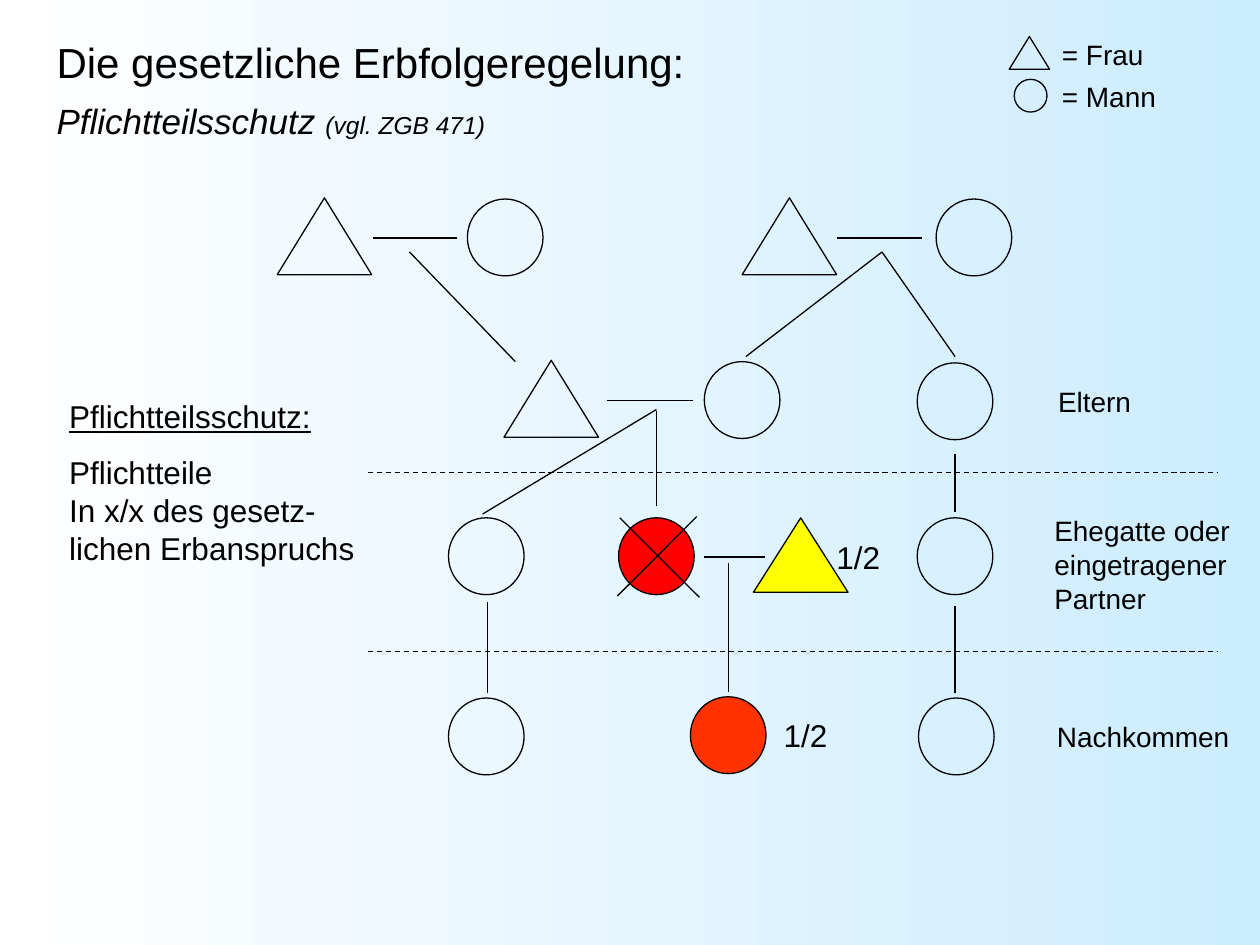
import pptx
import pptx.dml.color
import pptx.enum.dml
import pptx.enum.shapes
import pptx.enum.text
import pptx.oxml.ns
import pptx.util
from pptx.util import Inches

SHAPES = pptx.enum.shapes.MSO_SHAPE
TRIANGLE, CIRCLE = SHAPES.ISOSCELES_TRIANGLE, SHAPES.OVAL
BLACK = "000000"


def paint(color_format, hex_color):
    """Set a colour format to a hex colour."""
    color_format.rgb = pptx.dml.color.RGBColor.from_string(hex_color)


def add_symbol(page, kind, left, top, width, height, fill=None):
    """Add one outlined person symbol, filled if a colour is given."""
    shape = page.shapes.add_shape(kind, Inches(left), Inches(top), Inches(width), Inches(height))
    shape.shadow.inherit = False
    if fill:
        shape.fill.solid()
        paint(shape.fill.fore_color, fill)
    else:
        shape.fill.background()
    paint(shape.line.color, BLACK)
    shape.line.width = pptx.util.Pt(0.75)


def add_line(page, x1, y1, x2, y2, dashed=False):
    """Add one thin black straight line."""
    line = page.shapes.add_connector(
        pptx.enum.shapes.MSO_CONNECTOR.STRAIGHT, Inches(x1), Inches(y1), Inches(x2), Inches(y2))
    paint(line.line.color, BLACK)
    line.line.width = pptx.util.Pt(0.75)
    if dashed:
        line.line.dash_style = pptx.enum.dml.MSO_LINE.DASH
    properties = line._element.spPr
    properties.append(properties.makeelement(pptx.oxml.ns.qn("a:effectLst"), {}))


def add_span(para, text, size, italic=False, underline=False):
    """Add one run of black Arial text."""
    span = para.add_run()
    span.text = text
    span.font.name = "Arial"
    span.font.size = pptx.util.Pt(size)
    span.font.italic = italic
    span.font.underline = underline
    paint(span.font.color, BLACK)


def add_frame(page, left, top, width, height, wrap=True):
    """Add an empty text box and return its text frame."""
    box = page.shapes.add_textbox(Inches(left), Inches(top), Inches(width), Inches(height))
    box.text_frame.word_wrap = wrap
    return box.text_frame


def add_text(page, box, lines, size, gap=0, wrap=True, underline=False):
    """Add a text box with one paragraph for each line."""
    frame = add_frame(page, *box, wrap)
    for index, line in enumerate(lines):
        para = frame.add_paragraph() if index else frame.paragraphs[0]
        para.space_before = pptx.util.Pt(gap if index else 0)
        add_span(para, line, size, underline=underline)


def set_background(page):
    """Fill the page with a gradient from white to light blue."""
    fill = page.background.fill
    fill.gradient()
    fill.gradient_angle = 0
    for stop, position, color in zip(fill.gradient_stops, (0, 1), ("FFFFFF", "CCECFF")):
        stop.position = position
        paint(stop.color, color)


def add_heading(page, left, top, width, height):
    """Add the title with its italic second line."""
    frame = add_frame(page, left, top, width, height)
    frame.vertical_anchor = pptx.enum.text.MSO_ANCHOR.MIDDLE
    para = frame.paragraphs[0]
    para.line_spacing = 1.3
    add_span(para, "Die gesetzliche Erbfolgeregelung:", 24)
    para.add_line_break()
    add_span(para, "Pflichtteilsschutz ", 20, italic=True)
    add_span(para, "(vgl. ZGB 471)", 14, italic=True)


def add_legend(page, left, top):
    """Add the key to the two symbols."""
    add_symbol(page, TRIANGLE, left, top + 0.04, 0.32, 0.26)
    add_symbol(page, CIRCLE, left + 0.04, top + 0.38, 0.26, 0.26)
    add_text(page, (left + 0.32, top, 1.25, 0.72), ["= Frau", "= Mann"], 16, gap=5)


def add_explanation(page, left, top):
    """Add the note on compulsory shares."""
    add_text(page, (left, top, 2.12, 0.4), ["Pflichtteilsschutz:"], 18, wrap=False, underline=True)
    lines = ["Pflichtteile", "In x/x des gesetz-", "lichen Erbanspruchs"]
    add_text(page, (left, top + 0.45, 2.47, 1), lines, 18, wrap=False)


def add_family_tree(page, left, top):
    """Add persons, family lines, generation dividers and shares."""
    women = [(0, 0, None), (3.69, 0, None), (1.8, 1.29, None), (3.78, 2.54, "FFFF00")]
    men = [(1.51, 0.01, None), (5.23, 0.01, None), (3.39, 1.3, None), (5.08, 1.31, None),
           (1.36, 2.54, None), (2.71, 2.54, "FF0000"), (5.08, 2.54, None),
           (1.36, 3.97, None), (3.28, 3.96, "FF3300"), (5.09, 3.97, None)]
    for kind, width, people in ((TRIANGLE, 0.75, women), (CIRCLE, 0.6, men)):
        for x, y, fill in people:
            height = 0.59 if fill == "FFFF00" else 0.61
            add_symbol(page, kind, left + x, top + y, width, height, fill)

    marriages = [(0.76, 0.32, 0.67), (4.44, 0.32, 0.68), (2.62, 1.61, 0.68), (3.39, 2.85, 0.48)]
    for x, y, length in marriages:
        add_line(page, left + x, top + y, left + x + length, top + y)

    descents = [(1.05, 0.43, 1.89, 1.3), (4.8, 0.43, 3.72, 1.26), (4.8, 0.43, 5.38, 1.26),
                (3.01, 1.68, 1.63, 2.51), (3.01, 1.69, 3.01, 2.45), (5.38, 2.03, 5.38, 2.49),
                (1.67, 3.21, 1.67, 3.93), (3.58, 2.9, 3.58, 3.92), (5.38, 3.24, 5.38, 3.93)]
    death_cross = [(2.72, 2.54, 3.35, 3.17), (3.33, 2.53, 2.7, 3.16)]
    for x1, y1, x2, y2 in descents + death_cross:
        add_line(page, left + x1, top + y1, left + x2, top + y2)

    for y in (2.18, 3.6):
        add_line(page, left + 0.72, top + y, left + 7.47, top + y, dashed=True)
    for x, y in ((4.34, 2.65), (3.92, 4.06)):
        add_text(page, (left + x, top + y, 0.55, 0.4), ["1/2"], 18, wrap=False)


def add_generations(page, left, top):
    """Add the names of the three generations."""
    labels = [("Eltern", 0.03, 0, 1.5, 0.37),
              ("Ehegatte oder eingetragener Partner", 0, 1.03, 1.73, 0.9),
              ("Nachkommen", 0.02, 2.66, 1.71, 0.37)]
    for text, x, y, width, height in labels:
        add_text(page, (left + x, top + y, width, height), [text], 16)


def main():
    """Build the slide and save it."""
    deck = pptx.Presentation()
    deck.slide_width, deck.slide_height = Inches(10), Inches(7.5)
    page = deck.slides.add_slide(deck.slide_layouts[6])
    set_background(page)
    add_heading(page, 0.35, 0.25, 7.32, 0.8)
    add_family_tree(page, 2.2, 1.57)
    add_explanation(page, 0.45, 3.1)
    add_legend(page, 8.01, 0.25)
    add_generations(page, 8.27, 3)
    deck.save("out.pptx")


if __name__ == "__main__":
    main()
